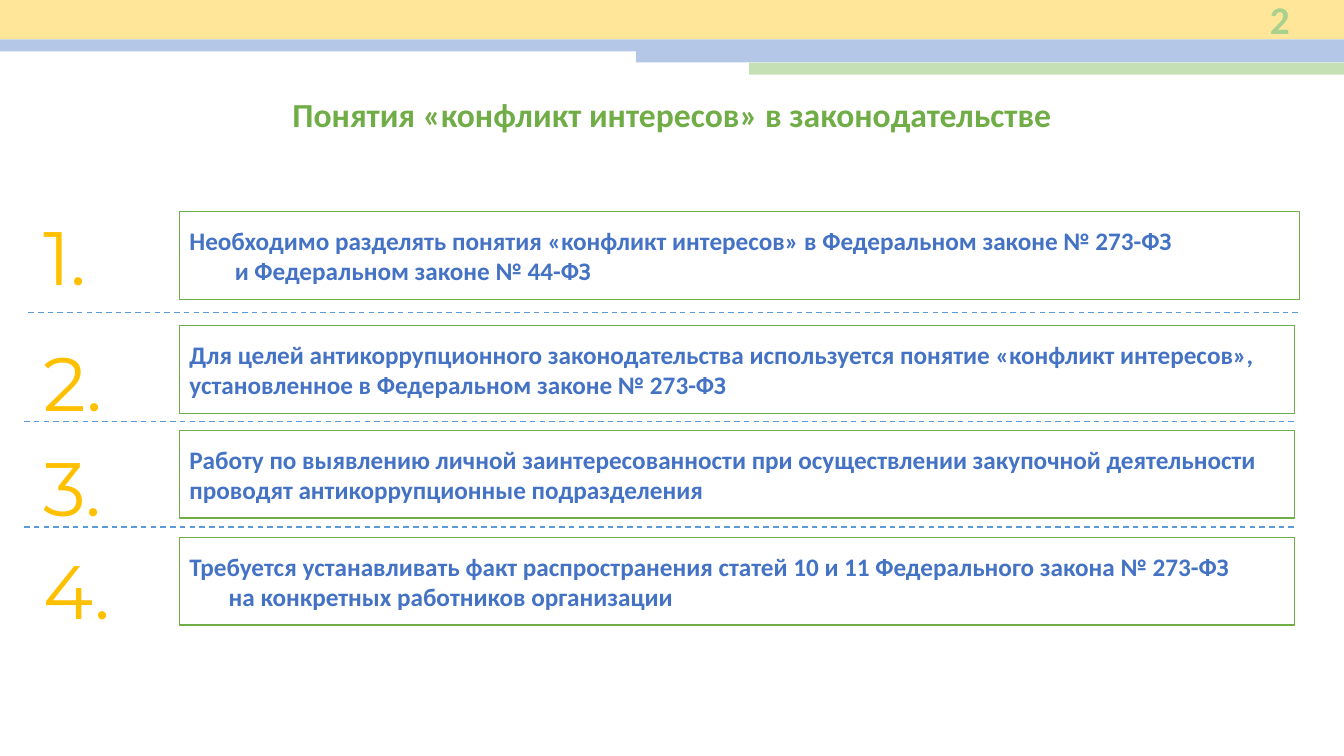
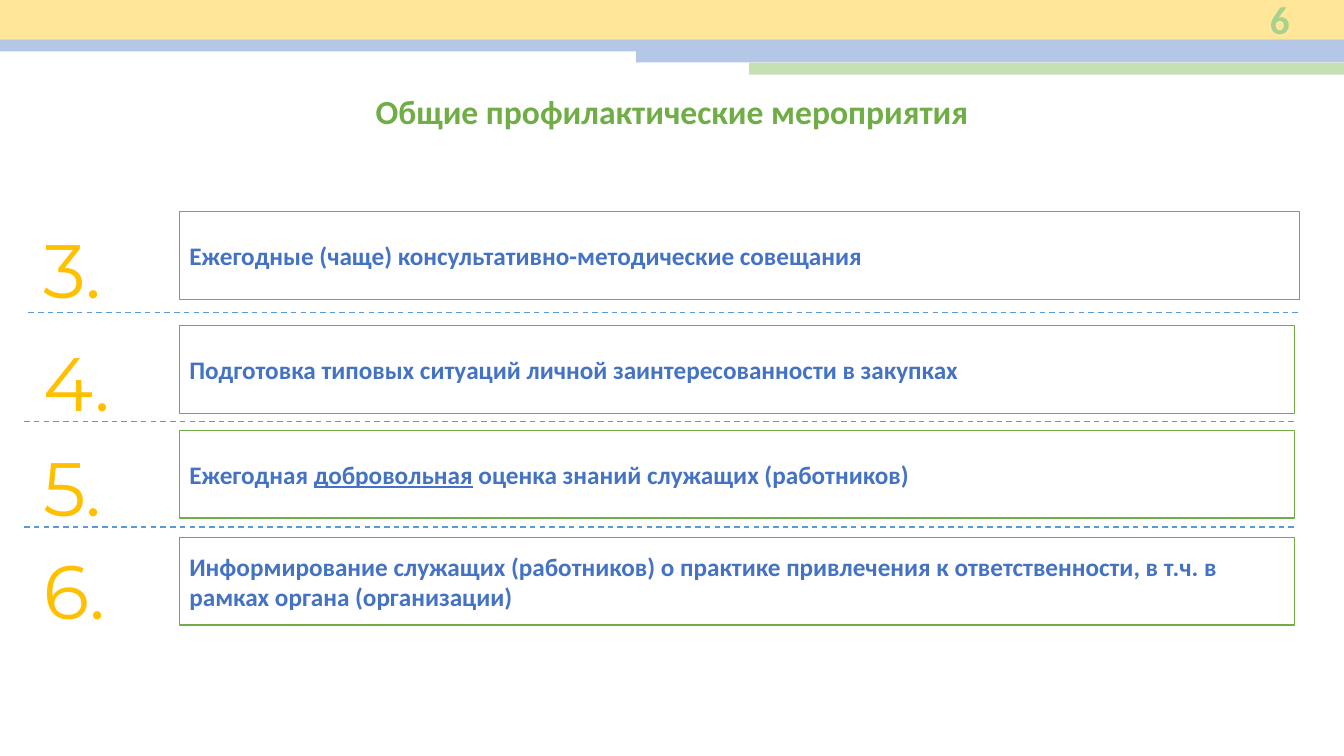
from lxml import etree
from pptx import Presentation
from pptx.dml.color import RGBColor
from pptx.enum import dml, shapes, text
from pptx.oxml.ns import qn
from pptx.util import Inches, Pt

GOLD = RGBColor(0xFF, 0xE6, 0x99)
PALE = RGBColor(0xB4, 0xC7, 0xE7)
MINT = RGBColor(0xC5, 0xE0, 0xB4)
LEAF = RGBColor(0xA9, 0xD1, 0x8E)
GREEN = RGBColor(0x70, 0xAD, 0x47)
BLUE = RGBColor(0x44, 0x72, 0xC4)
SKY = RGBColor(0x5B, 0x9B, 0xD5)
AMBER = RGBColor(0xFF, 0xC0, 0x00)

WIDE, HIGH = 13.33, 7.5
LEFT, MID, RIGHT = text.PP_ALIGN.LEFT, text.PP_ALIGN.CENTER, text.PP_ALIGN.RIGHT
TOP, CENTER = text.MSO_ANCHOR.TOP, text.MSO_ANCHOR.MIDDLE

TITLE = dict(name="Calibri", size=Pt(24), bold=True, color=GREEN)
PAGE = dict(name="Calibri", size=Pt(28), bold=True, color=LEAF)
BODY = dict(name="Calibri", size=Pt(18), bold=True, color=BLUE)
DIGIT = dict(name="Montserrat", size=Pt(54), bold=False, color=AMBER)

# left, top, width, height, fill
BANDS = [
    (0, 0, WIDE, 0.39, GOLD),
    (0, 0.39, WIDE, 0.12, PALE),
    (6.31, 0.5, 7.02, 0.12, PALE),
    (7.43, 0.62, 5.9, 0.12, MINT),
]
# box top, box width, left end of the rule, rule height on the slide
ROWS = [
    (2.1, 11.11, 0.28, 3.1),
    (3.23, 11.06, 0.24, 4.18),
    (4.27, 11.06, 0.24, 5.23),
    (5.33, 11.06, None, None),
]
DIGIT_TOPS = [3.28, 4.32, 5.35]

# Each point: text (underlined between "_"), indent of its second line
SLIDES = [
    dict(page=2, title="Понятия «конфликт интересов» в законодательстве",
         title_top=0.88, start=1, digit_top=2.03, points=[
             ("Необходимо разделять понятия «конфликт интересов» в Федеральном "
              "законе № 273-ФЗ\nи Федеральном законе № 44-ФЗ", 0.45),
             ("Для целей антикоррупционного законодательства используется понятие "
              "«конфликт интересов», установленное в Федеральном законе № 273-ФЗ", 0),
             ("Работу по выявлению личной заинтересованности при осуществлении "
              "закупочной деятельности проводят антикоррупционные подразделения", 0),
             ("Требуется устанавливать факт распространения статей 10 и 11 Федерального "
              "закона № 273-ФЗ\nна конкретных работников организации", 0.39)]),
    dict(page=6, title="Общие профилактические мероприятия",
         title_top=0.85, start=3, digit_top=2.16, points=[
             ("Ежегодные (чаще) консультативно-методические совещания", 0),
             ("Подготовка типовых ситуаций личной заинтересованности в закупках", 0),
             ("Ежегодная _добровольная_ оценка знаний служащих (работников)", 0),
             ("Информирование служащих (работников) о практике привлечения "
              "к ответственности, в т.ч. в рамках органа (организации)", 0)]),
]


def area(*sizes):
    return [Inches(size) for size in sizes]


def style(run, font):
    for key, value in font.items():
        if key == "color":
            run.font.color.rgb = value
        else:
            setattr(run.font, key, value)


def write(shape, words, font, align=LEFT, anchor=TOP, indent=0):
    """Fill a shape; "_" toggles underline and a new line makes a break."""
    frame = shape.text_frame
    frame.word_wrap = True
    frame.auto_size = text.MSO_AUTO_SIZE.NONE
    frame.vertical_anchor = anchor
    para = frame.paragraphs[0]
    para.alignment = align
    if indent:
        props = para._p.get_or_add_pPr()
        props.set("marL", str(Inches(indent)))
        props.set("indent", str(-Inches(indent)))
    for row, line in enumerate(words.split("\n")):
        if row:
            para.add_line_break()
        for index, part in enumerate(line.split("_")):
            run = para.add_run()
            run.text = part
            style(run, font)
            if index % 2:
                run.font.underline = True


def add_rect(parent, box):
    rect = parent.add_shape(shapes.MSO_SHAPE.RECTANGLE, *area(*box))
    rect.shadow.inherit = False
    return rect


def add_bands(slide):
    group = slide.shapes.add_group_shape()
    for *box, fill in BANDS:
        band = add_rect(group.shapes, box)
        band.fill.solid()
        band.fill.fore_color.rgb = fill
        band.line.fill.background()


def add_head(slide, page, title, top):
    add_bands(slide)
    number = slide.shapes.add_textbox(*area(12, 0, 0.89, 0.38))
    write(number, str(page), PAGE, RIGHT, CENTER)
    head = slide.shapes.title
    head.left, head.top, head.width, head.height = area(0.6, top, 12.13, 0.5)
    write(head, title, TITLE, MID)


def add_rule(slide, left, top):
    rule = slide.shapes.add_connector(
        shapes.MSO_CONNECTOR.STRAIGHT, *area(left, top, left + 12.61, top))
    rule.line.color.rgb = SKY
    rule.line.width = Pt(1)
    rule.line.dash_style = dml.MSO_LINE.DASH
    etree.SubElement(rule._element.spPr, qn("a:effectLst"))


def add_point(slide, box, point, digit, digit_top):
    """Place a framed point and its large number to the left."""
    left = box[0]
    frame = add_rect(slide.shapes, box)
    frame.fill.background()
    frame.line.color.rgb = GREEN
    frame.line.width = Pt(1)
    words, indent = point
    write(frame, words, BODY, anchor=CENTER, indent=indent)
    label = slide.shapes.add_textbox(*area(left - 1.45, digit_top, 1.25, 1.01))
    write(label, f"{digit}.", DIGIT)


def add_list(deck, page, title, title_top, start, digit_top, points):
    slide = deck.slides.add_slide(deck.slide_layouts[5])
    add_head(slide, page, title, title_top)
    tops = [digit_top, *DIGIT_TOPS]
    for index, (row, point, top) in enumerate(zip(ROWS, points, tops)):
        box_top, width, rule_left, rule_top = row
        add_point(slide, (1.78, box_top, width, 0.87), point, start + index, top)
        if rule_top:
            add_rule(slide, rule_left, rule_top)


def main():
    deck = Presentation()
    deck.slide_width, deck.slide_height = area(WIDE, HIGH)
    for content in SLIDES:
        add_list(deck, **content)
    deck.save("out.pptx")


if __name__ == "__main__":
    main()
